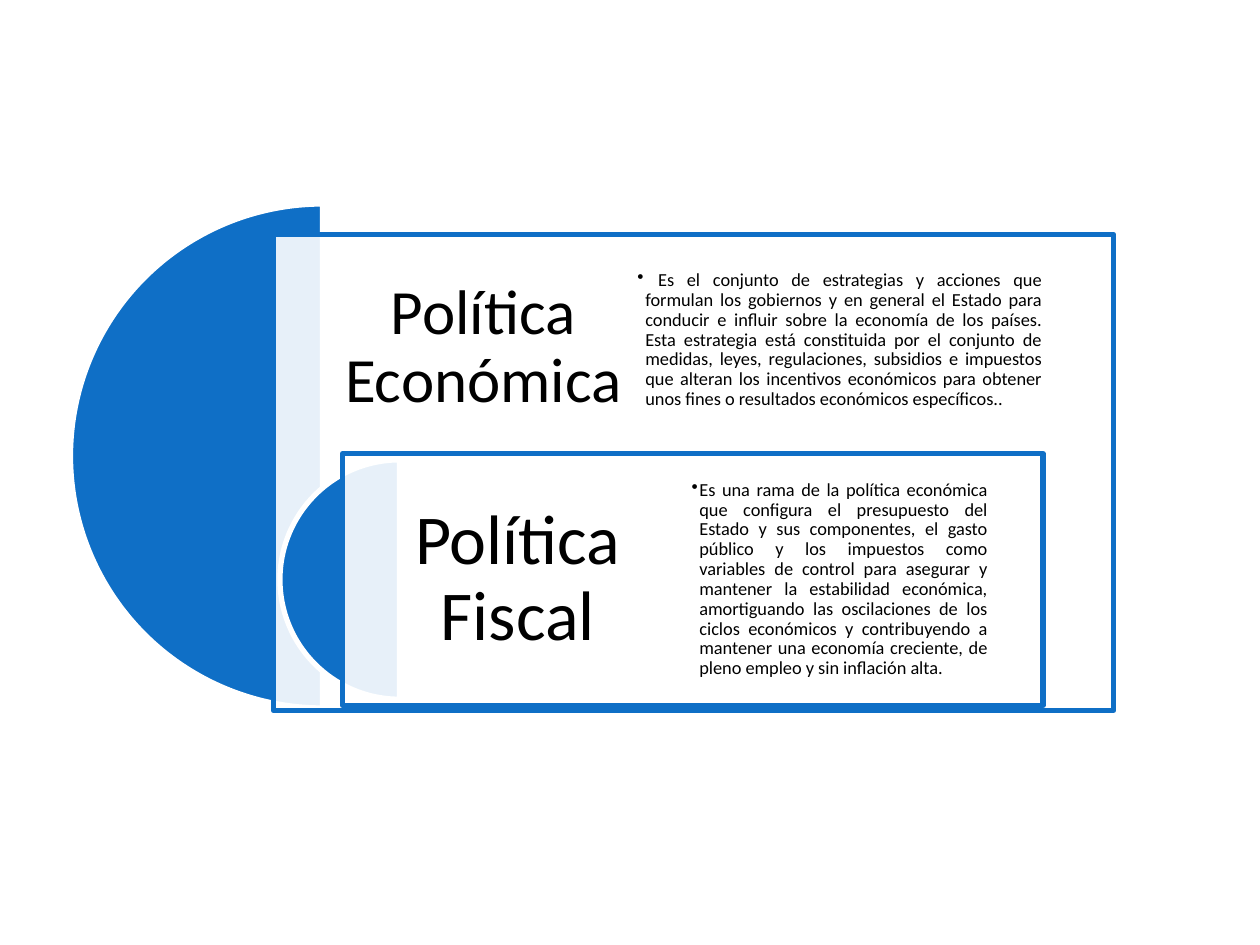
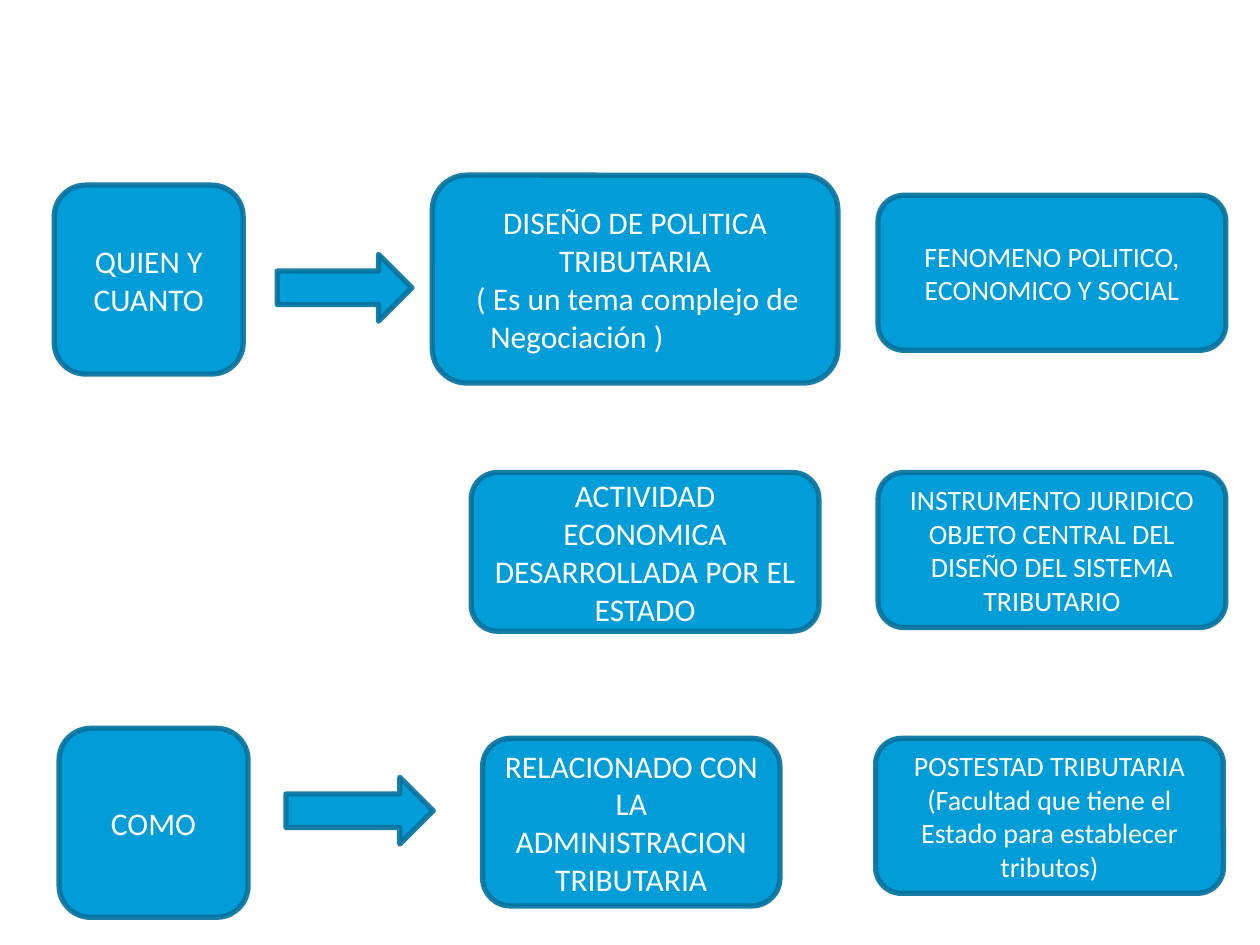
from pptx import Presentation
from pptx.dml.color import RGBColor
from pptx.enum.shapes import MSO_SHAPE as SHP
from pptx.enum.text import MSO_ANCHOR as ANCHOR, PP_ALIGN as ALIGN
from pptx.oxml.ns import qn
from pptx.util import Pt
from lxml.etree import SubElement

COLORS = {
    "white": "FFFFFF",
    "black": "000000",
    "policy": "0F6FC6",
    "box": "009DD9",
    "box_edge": "00719D",
}
FONT = "Calibri"


def add_block(slide, kind, rect, fill, line, fill_alpha=100, line_alpha=100):
    """Add a preset shape with a 3 pt outline; alphas are opacity percentages."""
    s = slide.shapes.add_shape(kind, *[Pt(v) for v in rect])
    s.shadow.inherit = False
    s.fill.solid()
    s.fill.fore_color.rgb = RGBColor.from_string(COLORS[fill])
    s.line.color.rgb = RGBColor.from_string(COLORS[line])
    s.line.width = Pt(3)
    for where, alpha in (("a:solidFill", fill_alpha), ("a:ln/a:solidFill", line_alpha)):
        if alpha < 100:
            clr = s.element.spPr.xpath(where + "/a:srgbClr")[0]
            SubElement(clr, qn("a:alpha"), val=str(alpha * 1000))
    return s


def write(s, lines, size, color, align=ALIGN.CENTER, inset=None, spacing=None, bullet=False):
    """Fill a shape with (text, left indent) lines; indented lines are left-aligned."""
    tf = s.text_frame
    tf.word_wrap = True
    tf.vertical_anchor = ANCHOR.MIDDLE
    if inset is not None:
        tf.margin_left = tf.margin_top = tf.margin_right = tf.margin_bottom = Pt(inset)
    for i, (text, indent) in enumerate(lines):
        p = tf.paragraphs[0] if i == 0 else tf.add_paragraph()
        p.alignment = ALIGN.LEFT if indent else align
        if spacing:
            p.line_spacing = spacing
        pPr = p._p.get_or_add_pPr()
        if indent:
            pPr.set("marL", str(Pt(indent)))
        if bullet:
            pPr.set("marL", str(Pt(4.5)))
            pPr.set("indent", str(-Pt(4.5)))
            SubElement(pPr, qn("a:buChar"), char="•")
        r = p.add_run()
        r.text = text
        r.font.name = FONT
        r.font.size = Pt(size)
        r.font.color.rgb = RGBColor.from_string(COLORS[color])


prs = Presentation()
prs.slide_width, prs.slide_height = Pt(720), Pt(540)
blank = prs.slide_layouts[6]

# Slide 1: fiscal policy nested inside economic policy
slide = prs.slides.add_slide(blank)
policies = [
    {
        "pie": (40.3, 116.6, 288, 288),
        "panel": (156.2, 134, 480.2, 272),
        "title": ("Política Económica", (156.2, 134, 240, 129.6), 36, 10.8),
        "detail": (
            " Es el conjunto de estrategias y acciones que formulan los gobiernos y en "
            "general el Estado para conducir e influir sobre la economía de los países. "
            "Esta estrategia está constituida por el conjunto de medidas, leyes, "
            "regulaciones, subsidios e impuestos que alteran los incentivos económicos "
            "para obtener unos fines o resultados económicos específicos..",
            (344.9, 126, 270, 136.8),
        ),
    },
    {
        "pie": (160, 262.8, 136.8, 136.8),
        "panel": (195.8, 259.2, 400.3, 144),
        "title": ("Política Fiscal", (195.8, 259.2, 200.2, 144), 40, 12.2),
        "detail": (
            "Es una rama de la política económica que configura el presupuesto del Estado "
            "y sus componentes, el gasto público y los impuestos como variables de control "
            "para asegurar y mantener la estabilidad económica, amortiguando las "
            "oscilaciones de los ciclos económicos y contribuyendo a mantener una economía "
            "creciente, de pleno empleo y sin inflación alta.",
            (375.8, 262.8, 208, 136.8),
        ),
    },
]
for policy in policies:
    pie = add_block(slide, SHP.PIE, policy["pie"], "policy", "white")
    pie.adjustments[0], pie.adjustments[1] = 54, 162  # left half: 90° to 270°
    add_block(slide, SHP.RECTANGLE, policy["panel"], "white", "policy", fill_alpha=90)

    title, rect, size, inset = policy["title"]
    s = slide.shapes.add_textbox(*[Pt(v) for v in rect])
    write(s, [(title, 0)], size, "black", inset=inset, spacing=0.9)

    detail, rect = policy["detail"]
    s = slide.shapes.add_textbox(*[Pt(v) for v in rect])
    write(s, [(detail, 0)], 10.5, "black", ALIGN.JUSTIFY, 19.4, 0.9, bullet=True)

# Slide 2: who, how much and how
slide = prs.slides.add_slide(blank)
boxes = [
    ((31, 105.8, 108, 108), 18, [("QUIEN Y CUANTO", 0)]),
    ((247, 100.1, 231.8, 118.8), 18, [
        ("DISEÑO DE POLITICA TRIBUTARIA", 0),
        ("( Es un tema complejo de", 12.2),
        ("Negociación )", 20.3),
    ]),
    ((501.8, 111.6, 198.7, 88.6), 16, [("FENOMENO POLITICO, ECONOMICO Y SOCIAL", 0)]),
    ((269.3, 270, 198.7, 90.7), 18, [("ACTIVIDAD ECONOMICA DESARROLLADA POR EL ESTADO", 0)]),
    ((501.8, 270, 198.7, 88.6), 16,
     [("INSTRUMENTO JURIDICO OBJETO CENTRAL DEL DISEÑO DEL SISTEMA TRIBUTARIO", 0)]),
    ((33.8, 416.2, 108, 108), 18, [("COMO", 0)]),
    ((275.8, 421.9, 169.9, 95.8), 18, [("RELACIONADO CON LA ADMINISTRACION TRIBUTARIA", 0)]),
    ((500.4, 421.9, 198.7, 88.6), 16,
     [("POSTESTAD TRIBUTARIA (Facultad que tiene el Estado para establecer tributos)", 0)]),
]
for rect, size, lines in boxes:
    s = add_block(slide, SHP.ROUNDED_RECTANGLE, rect, "box", "box_edge", line_alpha=90)
    write(s, lines, size, "white")

for rect in ((158.4, 145.4, 77, 38.2), (163.4, 444.2, 84.2, 38.2)):
    add_block(slide, SHP.RIGHT_ARROW, rect, "box", "box_edge", line_alpha=90)

prs.save("out.pptx")
